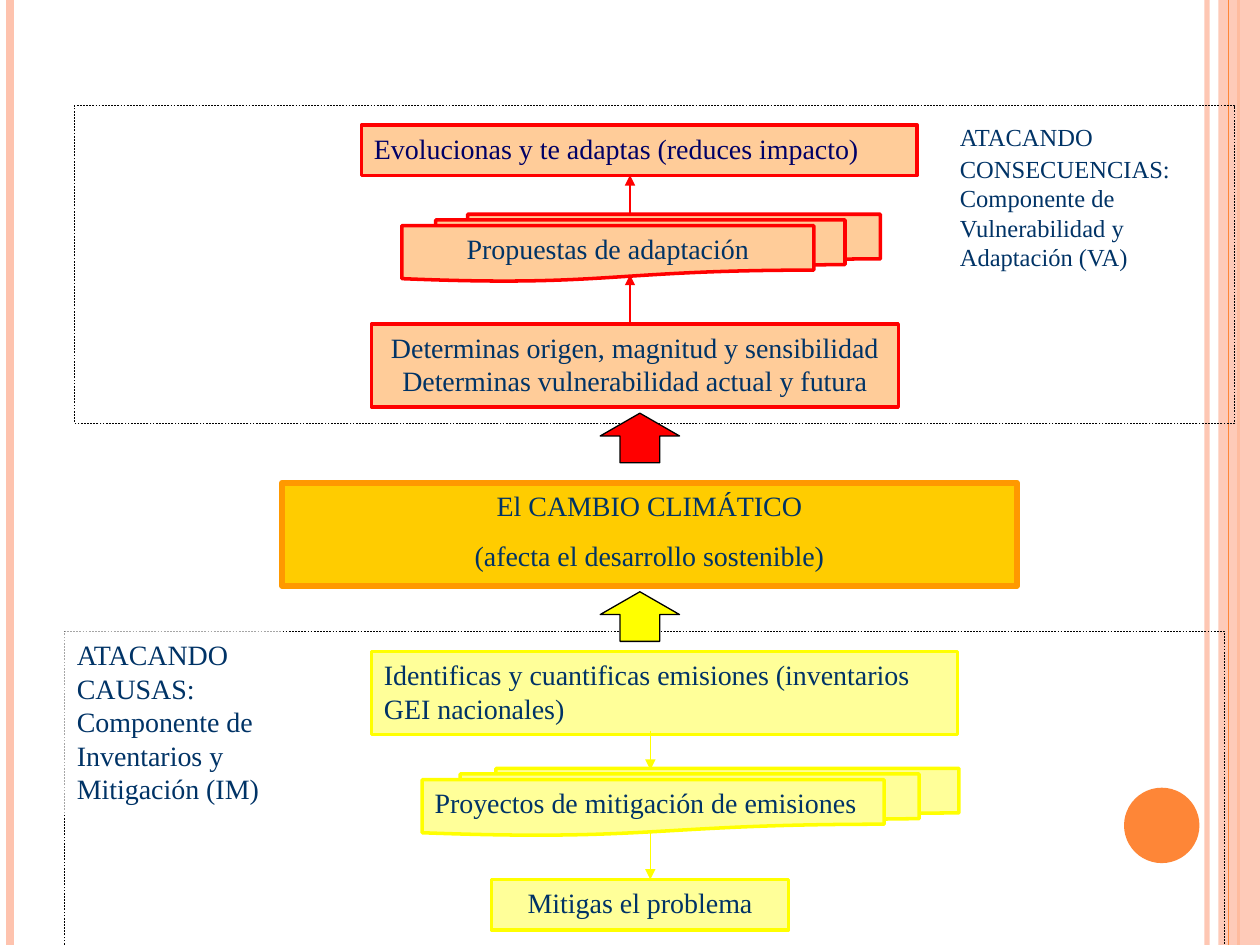
from dataclasses import dataclass

from lxml.etree import SubElement
from pptx import Presentation
from pptx.dml.color import RGBColor
from pptx.enum.dml import MSO_LINE
from pptx.enum.shapes import MSO_CONNECTOR as Connector, MSO_SHAPE as Shape
from pptx.enum.text import MSO_ANCHOR as Anchor, MSO_AUTO_SIZE as AutoSize, PP_ALIGN as Align
from pptx.oxml.ns import qn
from pptx.util import Cm, Pt


@dataclass(frozen=True)
class Theme:
    font: str = "Times New Roman"
    body: float = 16
    label: float = 14
    gap: float = 20
    paragraph_gap: float = 9
    navy: str = "003366"
    indigo: str = "000066"
    black: str = "000000"
    white: str = "FFFFFF"
    pink: str = "FEC3AE"
    orange: str = "FE8637"
    gold: str = "FFCC00"
    amber: str = "FF9900"
    peach: str = "FFCC99"
    red: str = "FF0000"
    cream: str = "FFFF99"
    yellow: str = "FFFF00"


THEME = Theme()


@dataclass(frozen=True)
class Run:
    text: str
    color: str = THEME.navy
    size: float = THEME.body


@dataclass(frozen=True)
class Box:
    """Shape with lengths in centimetres; each paragraph is a tuple of runs."""
    left: float
    top: float
    width: float
    height: float
    fill: str | None = None
    line: str | None = None
    weight: float = 2
    kind: Shape = Shape.RECTANGLE
    paragraphs: tuple[tuple[Run, ...], ...] = ()
    align: Align = Align.CENTER
    dashed: bool = False
    alpha: int = 100
    adjust: tuple[float, ...] = ()


@dataclass(frozen=True)
class Line:
    x: float
    start: float
    end: float
    color: str
    weight: float = 0.75
    arrow: bool = False
    alpha: int = 100


def set_alpha(properties, percent: int) -> None:
    if percent < 100:
        color = properties.find(".//" + qn("a:srgbClr"))
        SubElement(color, qn("a:alpha")).set("val", str(percent * 1000))


def write_text(shape, box: Box) -> None:
    frame = shape.text_frame
    frame.word_wrap = True
    frame.vertical_anchor = Anchor.TOP
    frame.auto_size = AutoSize.SHAPE_TO_FIT_TEXT
    for index, runs in enumerate(box.paragraphs):
        paragraph = frame.add_paragraph() if index else frame.paragraphs[0]
        paragraph.alignment = box.align
        if index:
            paragraph.space_before = Pt(THEME.paragraph_gap)
        for item in runs:
            run = paragraph.add_run()
            run.text = item.text
            run.font.name = THEME.font
            run.font.size = Pt(item.size)
            run.font.color.rgb = RGBColor.from_string(item.color)


def draw_box(slide, box: Box) -> None:
    place = [Cm(v) for v in (box.left, box.top, box.width, box.height)]
    if box.fill or box.line:
        shape = slide.shapes.add_shape(box.kind, *place)
        shape.shadow.inherit = False
    else:
        shape = slide.shapes.add_textbox(*place)
    for index, value in enumerate(box.adjust):
        shape.adjustments[index] = value
    if box.fill:
        shape.fill.solid()
        shape.fill.fore_color.rgb = RGBColor.from_string(box.fill)
        set_alpha(shape._element.spPr, box.alpha)
    else:
        shape.fill.background()
    if box.line:
        shape.line.color.rgb = RGBColor.from_string(box.line)
        shape.line.width = Pt(box.weight)
        if box.dashed:
            shape.line.dash_style = MSO_LINE.DASH
    else:
        shape.line.fill.background()
    if box.paragraphs:
        write_text(shape, box)


def draw_line(slide, line: Line) -> None:
    connector = slide.shapes.add_connector(
        Connector.STRAIGHT, Cm(line.x), Cm(line.start), Cm(line.x), Cm(line.end))
    connector.line.color.rgb = RGBColor.from_string(line.color)
    connector.line.width = Pt(line.weight)
    properties = connector._element.spPr
    set_alpha(properties, line.alpha)
    if line.arrow:
        SubElement(properties.find(qn("a:ln")), qn("a:tailEnd")).set("type", "triangle")
    SubElement(properties, qn("a:effectLst"))


def step(left: float, top: float, width: float, height: float, text: str,
         colors: tuple[str, str], color: str = THEME.navy, **options) -> Box:
    fill, line = colors
    return Box(left, top, width, height, fill, line,
               paragraphs=((Run(text, color),),), **options)


WIDTH, HEIGHT = 25.4, 19.05
ADAPTATION = (THEME.peach, THEME.red)
MITIGATION = (THEME.cream, THEME.yellow)
STACK = Shape.FLOWCHART_MULTIDOCUMENT

# Side stripes and page-number disc
BACKGROUND = [
    Line(24.33, 0, HEIGHT, THEME.pink, 3, alpha=93),
    Line(0.2, 0, HEIGHT, THEME.pink, 4.5),
    Line(24.97, 0, HEIGHT, THEME.orange, 1.5),
    Box(24.56, 0, 0.84, HEIGHT, THEME.pink, alpha=87),
    Line(24.77, 0, HEIGHT, THEME.orange),
    Box(22.66, 15.88, 1.52, 1.52, THEME.orange, kind=Shape.OVAL),
]

# Central problem and the steps on both sides of it
STEPS = [
    Box(5.69, 9.73, 14.81, 2.08, THEME.gold, THEME.amber, 3.5,
        paragraphs=((Run("El CAMBIO CLIMÁTICO"),),
                    (Run("(afecta el desarrollo sostenible)"),))),
    step(7.29, 2.52, 11.2, 1.02, "Evolucionas y te adaptas (reduces impacto)",
         ADAPTATION, THEME.indigo, align=Align.LEFT),
    step(9.91, 17.73, 5.99, 1.02, "Mitigas el problema", MITIGATION),
    step(7.49, 13.13, 11.81, 1.68,
         "Identificas y cuantificas emisiones (inventarios GEI nacionales)",
         MITIGATION, align=Align.LEFT),
    step(7.49, 6.53, 10.62, 1.68,
         "Determinas origen, magnitud y sensibilidad Determinas vulnerabilidad actual y futura",
         ADAPTATION),
    step(8.51, 15.49, 10.82, 1.35, "Proyectos de mitigación de emisiones",
         MITIGATION, align=Align.LEFT, kind=STACK),
    step(8.1, 4.32, 9.65, 1.35, "Propuestas de adaptación", ADAPTATION, kind=STACK),
]

# Dashed frames and their labels
FRAMES = [Box(left, top, 23.39, 6.4, line=THEME.black, weight=0.25, dashed=True)
          for left, top in ((1.3, 12.73), (1.5, 2.13))]
LABELS = [
    Box(1.3, 12.73, 4.39, 3.66, THEME.white, align=Align.LEFT, paragraphs=((
        Run("ATACANDO CAUSAS: Componente de Inventarios y Mitigación (IM)"),),)),
    Box(19.1, 2.13, 5.79, 3.45, align=Align.LEFT, paragraphs=((
        Run("ATACANDO", size=THEME.label),
        Run(" ", THEME.black, THEME.gap),
        Run("CONSECUENCIAS: Componente de Vulnerabilidad y Adaptación (VA)",
            size=THEME.label)),)),
]

# Thin arrows between steps, block arrows around the problem
ARROWS = [Line(x, start, end, color, arrow=True) for x, start, end, color in (
    (12.7, 6.53, 5.54, THEME.red),
    (12.7, 4.32, 3.53, THEME.red),
    (13.11, 14.73, 15.52, THEME.yellow),
    (13.11, 16.74, 17.73, THEME.yellow),
)]
BLOCK_ARROWS = [Box(12.1, top, 1.6, 1, fill, THEME.black, 0.75, Shape.UP_ARROW,
                    adjust=(0.5, 0.46))
                for top, fill in ((8.33, THEME.red), (11.93, THEME.yellow))]


def main() -> None:
    deck = Presentation()
    deck.slide_width, deck.slide_height = Cm(WIDTH), Cm(HEIGHT)
    slide = deck.slides.add_slide(deck.slide_layouts[6])
    for part in BACKGROUND + STEPS + FRAMES + LABELS + ARROWS + BLOCK_ARROWS:
        if isinstance(part, Line):
            draw_line(slide, part)
        else:
            draw_box(slide, part)
    deck.save("out.pptx")


if __name__ == "__main__":
    main()
